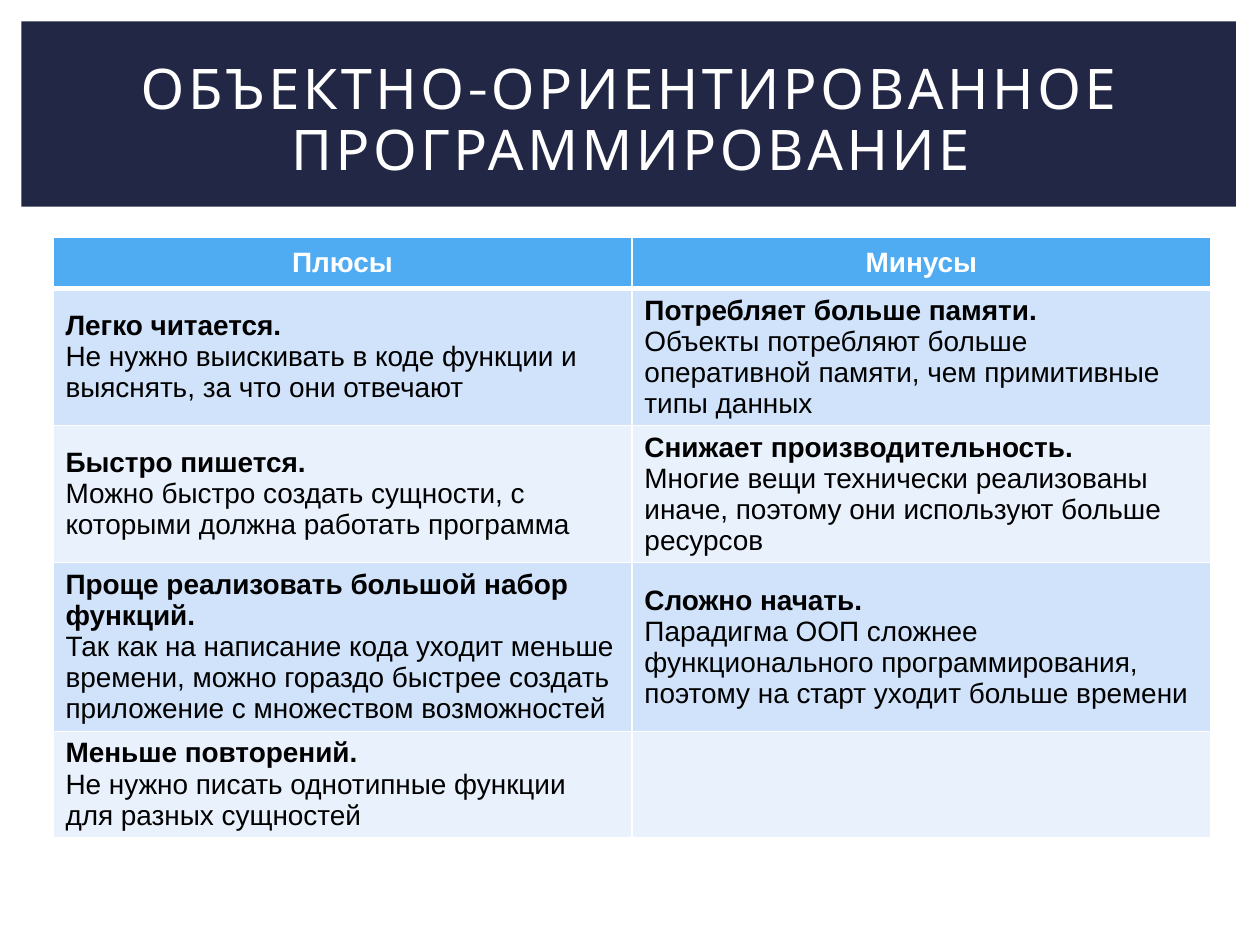
"""Build a slide comparing the pros and cons of object-oriented programming."""
from lxml.etree import SubElement
from pptx import Presentation
from pptx.dml.color import RGBColor
from pptx.enum.shapes import MSO_SHAPE
from pptx.enum.text import MSO_ANCHOR, PP_ALIGN
from pptx.oxml.ns import qn
from pptx.util import Inches, Pt

NAVY = RGBColor(0x21, 0x27, 0x45)
BLUE = RGBColor(0x4F, 0xAC, 0xF3)
LIGHT = RGBColor(0xD0, 0xE3, 0xFA)
PALE = RGBColor(0xE9, 0xF1, 0xFD)
WHITE = RGBColor(0xFF, 0xFF, 0xFF)
BLACK = RGBColor(0, 0, 0)

TITLE = "ОБЪЕКТНО-ОРИЕНТИРОВАННОЕ ПРОГРАММИРОВАНИЕ"
HEADINGS = ["Плюсы", "Минусы"]
PROS = [
    ("Легко читается.",
     "Не нужно выискивать в коде функции и выяснять, за что они отвечают"),
    ("Быстро пишется.",
     "Можно быстро создать сущности, с которыми должна работать программа"),
    ("Проще реализовать большой набор функций.",
     "Так как на написание кода уходит меньше времени, можно гораздо быстрее "
     "создать приложение с множеством возможностей"),
    ("Меньше повторений.",
     "Не нужно писать однотипные функции для разных сущностей"),
]
CONS = [
    ("Потребляет больше памяти.",
     "Объекты потребляют больше оперативной памяти, чем примитивные типы данных"),
    ("Снижает производительность.",
     "Многие вещи технически реализованы иначе, поэтому они используют больше ресурсов"),
    ("Сложно начать.",
     "Парадигма ООП сложнее функционального программирования, "
     "поэтому на старт уходит больше времени"),
    None,
]
ROW_HEIGHTS = [0.41, 1.08, 1.08, 1.34, 0.84]


def add_span(para, text, color, **formats):
    span = para.add_run()
    span.text = text
    span.font.color.rgb = color
    for name, value in formats.items():
        setattr(span.font, name, value)
    return span


def style_cell(cell, color, bottom_width):
    cell.vertical_anchor = MSO_ANCHOR.MIDDLE
    properties = cell._tc.get_or_add_tcPr()
    widths = {"a:lnL": 1, "a:lnR": 1, "a:lnT": 1, "a:lnB": bottom_width}
    for side, width in widths.items():
        line = SubElement(properties, qn(side), w=str(Pt(width)))
        fill = SubElement(line, qn("a:solidFill"))
        SubElement(fill, qn("a:srgbClr"), val=str(WHITE))
    cell.fill.solid()
    cell.fill.fore_color.rgb = color


deck = Presentation()
deck.slide_width, deck.slide_height = Inches(10), Inches(7.5)
page = deck.slides.add_slide(deck.slide_layouts[6])

banner = page.shapes.add_shape(
    MSO_SHAPE.RECTANGLE, Inches(0.17), Inches(0.17), Inches(9.64), Inches(1.47))
banner.shadow.inherit = False
banner.fill.solid()
banner.fill.fore_color.rgb = NAVY
banner.line.fill.background()

table = page.shapes.add_table(
    len(ROW_HEIGHTS), 2, Inches(0.42), Inches(1.88),
    Inches(9.19), Inches(sum(ROW_HEIGHTS))).table
for row, height in zip(table.rows, ROW_HEIGHTS):
    row.height = Inches(height)

body_font = {"name": "Arial", "size": Pt(16)}
for column, (heading, points) in enumerate(zip(HEADINGS, [PROS, CONS])):
    cell = table.cell(0, column)
    style_cell(cell, BLUE, 3)
    para = cell.text_frame.paragraphs[0]
    para.alignment = PP_ALIGN.CENTER
    add_span(para, heading, WHITE, bold=True, **body_font)
    for index, point in enumerate(points, start=1):
        cell = table.cell(index, column)
        style_cell(cell, LIGHT if index % 2 else PALE, 1)
        if point:
            claim, reason = point
            para = cell.text_frame.paragraphs[0]
            add_span(para, claim, BLACK, bold=True, **body_font)
            para.add_line_break()
            add_span(para, reason, BLACK, bold=False, **body_font)
for index in range(1, len(ROW_HEIGHTS)):
    table.rows[index].height = Inches(ROW_HEIGHTS[index])

box = page.shapes.add_textbox(Inches(0.42), Inches(0.39), Inches(9.17), Inches(1.15))
frame = box.text_frame
for name, value in {"word_wrap": True, "vertical_anchor": MSO_ANCHOR.MIDDLE}.items():
    setattr(frame, name, value)
para = frame.paragraphs[0]
for name, value in {"alignment": PP_ALIGN.CENTER, "line_spacing": 0.9}.items():
    setattr(para, name, value)
span = add_span(para, TITLE, WHITE, name="Karla", size=Pt(32))
span._r.get_or_add_rPr().set("spc", "200")

deck.save("out.pptx")
